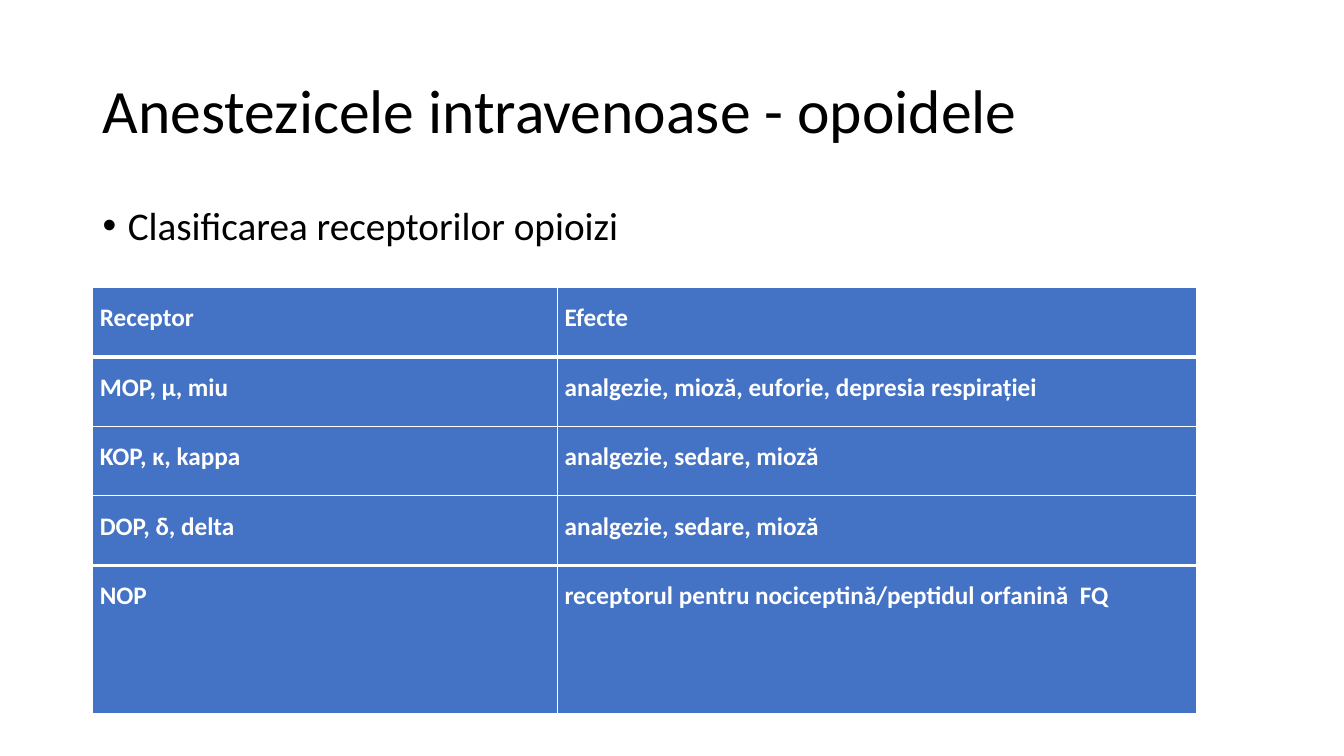
from pptx import Presentation
from pptx.dml.color import RGBColor
from pptx.enum.text import MSO_ANCHOR, PP_ALIGN
from pptx.oxml.ns import qn
from pptx.util import Inches, Pt
from lxml.etree import SubElement


def style(r, text, size, color, bold=False):
    r.text = text
    r.font.name = "Calibri"
    r.font.size = Pt(size)
    r.font.bold = bold
    r.font.color.rgb = RGBColor.from_string(color)


def border(tc_pr, side, width):
    ln = SubElement(tc_pr, qn("a:" + side), w=str(Pt(width)))
    fill = SubElement(ln, qn("a:solidFill"))
    SubElement(fill, qn("a:srgbClr"), val="FFFFFF")


prs = Presentation()
prs.slide_width, prs.slide_height = Inches(13.33), Inches(7.5)
s = prs.slides.add_slide(prs.slide_layouts[6])
left = Inches(0.92)

texts = [
    ("Anestezicele intravenoase - opoidele", 0.4, 1.45, 44, MSO_ANCHOR.MIDDLE),
    ("Clasificarea receptorilor opioizi", 2, 0.85, 28, MSO_ANCHOR.TOP),
]
for text, top, height, size, anchor in texts:
    sp = s.shapes.add_textbox(left, Inches(top), Inches(11.5), Inches(height))
    tf = sp.text_frame
    tf.word_wrap = True
    tf.vertical_anchor = anchor
    p = tf.paragraphs[0]
    p.line_spacing = 0.9
    style(p.add_run(), text, size, "000000")

p.space_before = Pt(10)
pPr = p._p.get_or_add_pPr()
pPr.set("marL", str(Inches(0.25)))
pPr.set("indent", str(-Inches(0.25)))
SubElement(pPr, qn("a:buFont"), typeface="Arial")
SubElement(pPr, qn("a:buChar"), char="•")

rows = [
    ("Receptor", "Efecte"),
    ("MOP, μ, miu", "analgezie, mioză, euforie, depresia respirației"),
    ("KOP, κ, kappa", "analgezie, sedare, mioză"),
    ("DOP, δ, delta", "analgezie, sedare, mioză"),
    ("NOP", "receptorul pentru nociceptină/peptidul orfanină  FQ"),
]
widths = [4.61, 6.34]
heights = [0.69] * 4 + [1.47]
thick_edges = {1, len(rows) - 1}

table = s.shapes.add_table(len(rows), len(widths), left, Inches(2.85),
                           Inches(sum(widths)), Inches(sum(heights))).table
for column, width in zip(table.columns, widths):
    column.width = Inches(width)
for i, (row, height) in enumerate(zip(rows, heights)):
    table.rows[i].height = Inches(height)
    for j, text in enumerate(row):
        cell = table.cell(i, j)
        cell.margin_left = cell.margin_right = Inches(0.07)
        cell.margin_top = cell.margin_bottom = 0
        p = cell.text_frame.paragraphs[0]
        p.alignment = PP_ALIGN.JUSTIFY
        p.line_spacing = 1.5
        style(p.add_run(), text, 18, "FFFFFF", True)
        tc_pr = cell._tc.get_or_add_tcPr()
        for side, edge in (("lnL", None), ("lnR", None), ("lnT", i), ("lnB", i + 1)):
            border(tc_pr, side, 3 if edge in thick_edges else 1)
        cell.fill.solid()
        cell.fill.fore_color.rgb = RGBColor.from_string("4472C4")

prs.save("out.pptx")
